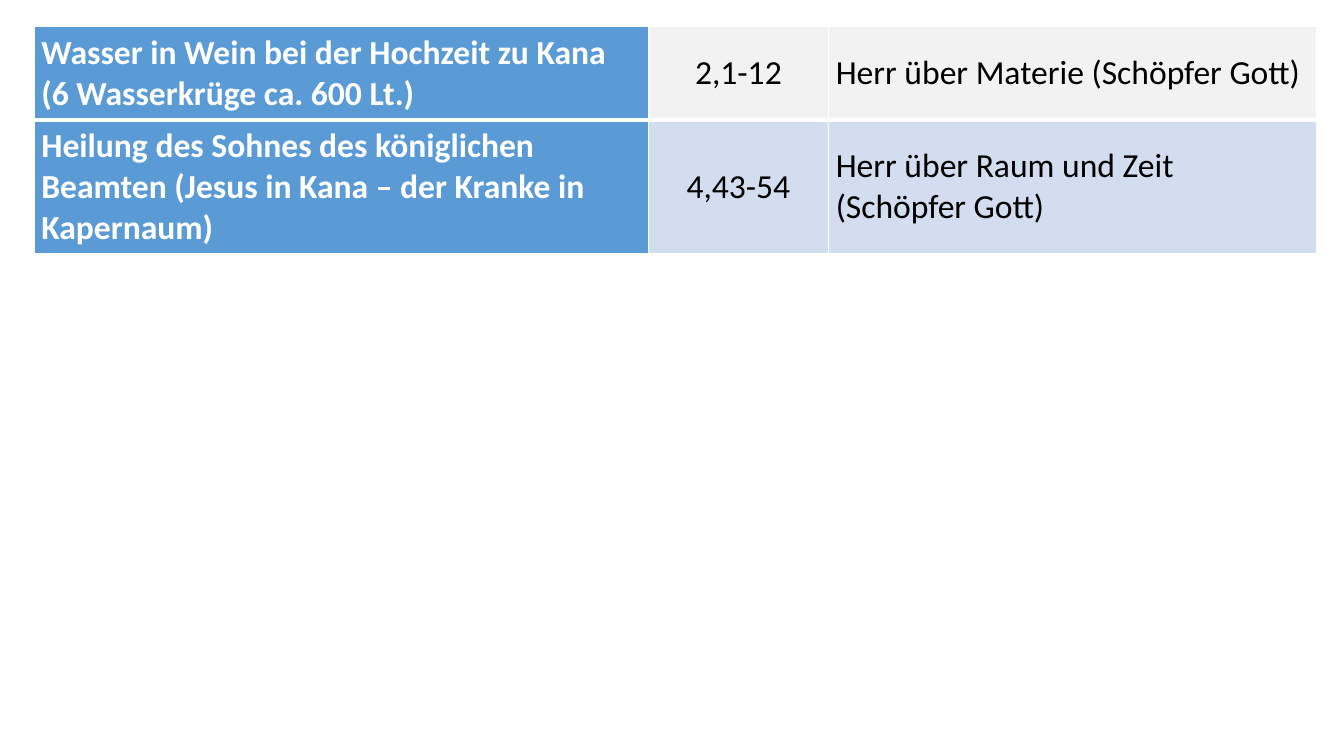
"""Build a slide with a table of signs, their passages and their meaning."""
import dataclasses

import lxml.etree
import pptx
import pptx.dml.color
import pptx.enum.text
import pptx.oxml.ns
import pptx.table
import pptx.util

Pt = pptx.util.Pt
RGBColor = pptx.dml.color.RGBColor
PP_ALIGN = pptx.enum.text.PP_ALIGN

WHITE = RGBColor(0xFF, 0xFF, 0xFF)
BLACK = RGBColor(0x00, 0x00, 0x00)
BLUE = RGBColor(0x5B, 0x9B, 0xD5)
LIGHT_GRAY = RGBColor(0xF2, 0xF2, 0xF2)
LIGHT_BLUE = RGBColor(0xD2, 0xDE, 0xEF)

LEFT, TOP = 24.5, 18.7
COLUMN_WIDTHS = (438.5, 129, 348.7)
THIN, THICK = 1, 3
CELL_FORMAT = {
    "vertical_anchor": pptx.enum.text.MSO_ANCHOR.MIDDLE,
    "margin_left": Pt(5.1),
    "margin_right": Pt(5.1),
    "margin_top": Pt(0),
    "margin_bottom": Pt(0),
}
TABLE_FORMAT = {"first_row": False, "horz_banding": False}


@dataclasses.dataclass(frozen=True)
class ColumnStyle:
    alignment: PP_ALIGN
    font: dict


@dataclasses.dataclass(frozen=True)
class SignRow:
    texts: tuple[str, str, str]
    height: float
    fill: RGBColor
    borders: dict[str, float]


HEADING_FONT = {"name": "Calibri", "size": Pt(24), "bold": True}
BODY_FONT = HEADING_FONT | {"bold": False}
COLUMN_STYLES = (
    ColumnStyle(PP_ALIGN.LEFT, HEADING_FONT),
    ColumnStyle(PP_ALIGN.CENTER, BODY_FONT),
    ColumnStyle(PP_ALIGN.LEFT, BODY_FONT),
)
SIGN_ROWS = (
    SignRow(
        ("Wasser in Wein bei der Hochzeit zu Kana\n(6 Wasserkrüge ca. 600 Lt.)",
         "2,1-12", "Herr über Materie (Schöpfer Gott)"),
        67, LIGHT_GRAY, {"L": THIN, "R": THIN, "T": THIN, "B": THICK},
    ),
    SignRow(
        ("Heilung des Sohnes des königlichen Beamten "
         "(Jesus in Kana – der Kranke in Kapernaum)",
         "4,43-54", "Herr über Raum und Zeit (Schöpfer Gott)"),
        95.8, LIGHT_BLUE, {"L": THIN, "R": THIN, "T": THICK, "B": THIN},
    ),
)


def apply_format(target: object, values: dict) -> None:
    for name, value in values.items():
        setattr(target, name, value)


def add_borders(cell: pptx.table._Cell, borders: dict[str, float]) -> None:
    qn = pptx.oxml.ns.qn
    properties = cell._tc.get_or_add_tcPr()
    for side, width in borders.items():
        line = lxml.etree.SubElement(properties, qn(f"a:ln{side}"), w=str(int(Pt(width))))
        fill = lxml.etree.SubElement(line, qn("a:solidFill"))
        lxml.etree.SubElement(fill, qn("a:srgbClr"), val=str(WHITE))


def fill_cell(cell: pptx.table._Cell, text: str, row: SignRow,
              style: ColumnStyle) -> None:
    is_heading = style.font is HEADING_FONT
    apply_format(cell, CELL_FORMAT)
    add_borders(cell, row.borders)
    cell.fill.solid()
    cell.fill.fore_color.rgb = BLUE if is_heading else row.fill
    cell.text = text
    for paragraph in cell.text_frame.paragraphs:
        paragraph.alignment = style.alignment
        for run in paragraph.runs:
            apply_format(run.font, style.font)
            run.font.color.rgb = WHITE if is_heading else BLACK


def main() -> None:
    presentation = pptx.Presentation()
    presentation.slide_width, presentation.slide_height = Pt(960), Pt(540)
    slide = presentation.slides.add_slide(presentation.slide_layouts.get_by_name("Blank"))
    table = slide.shapes.add_table(
        len(SIGN_ROWS), len(COLUMN_WIDTHS), Pt(LEFT), Pt(TOP),
        Pt(sum(COLUMN_WIDTHS)), Pt(sum(row.height for row in SIGN_ROWS)),
    ).table
    apply_format(table, TABLE_FORMAT)
    for column, width in zip(table.columns, COLUMN_WIDTHS):
        column.width = Pt(width)
    for table_row, row in zip(table.rows, SIGN_ROWS):
        table_row.height = Pt(row.height)
        for cell, text, style in zip(table_row.cells, row.texts, COLUMN_STYLES):
            fill_cell(cell, text, row, style)
    presentation.save("out.pptx")


if __name__ == "__main__":
    main()
